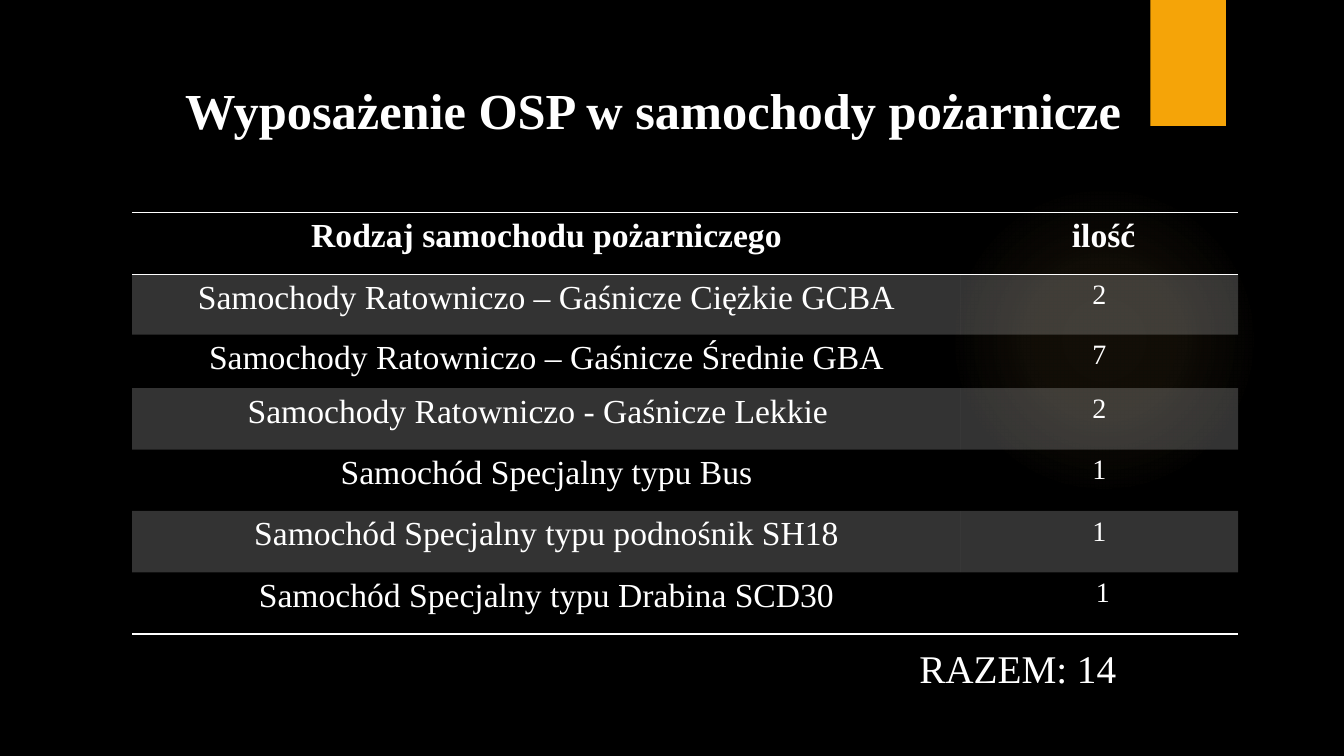
from lxml.etree import SubElement
from pptx import Presentation
from pptx.dml.color import RGBColor
from pptx.enum.shapes import MSO_SHAPE
from pptx.enum.text import MSO_ANCHOR, PP_ALIGN
from pptx.oxml import parse_xml
from pptx.oxml.ns import nsdecls, qn
from pptx.util import Inches, Pt


class Theme:
    font = "Times New Roman"
    background = "000000"
    text = "FFFFFF"
    accent = "F5A408"
    glow = "FAC96A"
    glow_stops = ((0, 7), (36, 6), (69, 0))
    band_opacity = 20
    title_size = 36
    total_size = 28
    heading_size = 24
    count_size = 20
    plain_table_style = "{2D5ABB26-0587-4C30-8999-92F81FD0307C}"


HEADINGS = ("Rodzaj samochodu pożarniczego", " ilość")
VEHICLES = (
    ("Samochody Ratowniczo – Gaśnicze Ciężkie GCBA", "2"),
    ("Samochody Ratowniczo – Gaśnicze Średnie GBA", "7"),
    ("Samochody Ratowniczo - Gaśnicze Lekkie", "2"),
    ("Samochód Specjalny typu Bus", "1"),
    ("Samochód Specjalny typu podnośnik SH18", "1"),
    ("Samochód Specjalny typu Drabina SCD30", " 1"),
)
COLUMN_WIDTHS = (8.22, 2.75)
ROW_HEIGHTS = (0.61, 0.6, 0.53, 0.61, 0.61, 0.61, 0.61)


def write_text(text_frame, text, size, bold=False, alignment=PP_ALIGN.CENTER, spacing=1.0):
    text_frame.text = text
    paragraph = text_frame.paragraphs[0]
    paragraph.alignment = alignment
    paragraph.line_spacing = spacing
    font = paragraph.runs[0].font
    for name, value in {"name": Theme.font, "size": Pt(size), "bold": bold}.items():
        setattr(font, name, value)
    font.color.rgb = RGBColor.from_string(Theme.text)


def add_plain_shape(slide, kind, left, top, width, height):
    shape = slide.shapes.add_shape(
        kind, Inches(left), Inches(top), Inches(width), Inches(height)
    )
    shape.shadow.inherit = False
    shape.line.fill.background()
    return shape


def add_glow(slide):
    shape = add_plain_shape(slide, MSO_SHAPE.OVAL, 9.41, 1.83, 3.08, 3.08)
    stops = "".join(
        f'<a:gs pos="{position * 1000}"><a:srgbClr val="{Theme.glow}">'
        f'<a:alpha val="{opacity * 1000}"/></a:srgbClr></a:gs>'
        for position, opacity in Theme.glow_stops
    )
    gradient = parse_xml(
        f'<a:gradFill {nsdecls("a")}><a:gsLst>{stops}</a:gsLst><a:path path="circle">'
        '<a:fillToRect l="50000" t="50000" r="50000" b="50000"/></a:path></a:gradFill>'
    )
    shape._element.spPr.find(qn("a:prstGeom")).addnext(gradient)


def add_accent_tab(slide):
    shape = add_plain_shape(slide, MSO_SHAPE.RECTANGLE, 11.41, 0, 0.75, 1.25)
    shape.fill.solid()
    shape.fill.fore_color.rgb = RGBColor.from_string(Theme.accent)


def format_title(slide, text):
    title = slide.shapes.title
    box = {"left": 0.53, "top": 0.7, "width": 11.9, "height": 0.84}
    for name, value in box.items():
        setattr(title, name, Inches(value))
    title.text_frame.vertical_anchor = MSO_ANCHOR.MIDDLE
    write_text(title.text_frame, text, Theme.title_size, bold=True, spacing=0.9)


def add_cell_borders(cell, edges):
    properties = cell._tc.get_or_add_tcPr()
    for index, edge in enumerate(edges):
        border = parse_xml(
            f'<a:{edge} {nsdecls("a")} w="{Pt(1)}"><a:solidFill>'
            f'<a:srgbClr val="{Theme.text}"/></a:solidFill></a:{edge}>'
        )
        properties.insert(index, border)


def fill_cell(cell, banded):
    if not banded:
        cell.fill.background()
        return
    cell.fill.solid()
    cell.fill.fore_color.rgb = RGBColor.from_string(Theme.text)
    color = cell._tc.tcPr.find(f'{qn("a:solidFill")}/{qn("a:srgbClr")}')
    SubElement(color, qn("a:alpha"), val=str(Theme.band_opacity * 1000))


def add_vehicle_table(slide):
    rows = (HEADINGS, *VEHICLES)
    frame = slide.shapes.add_table(
        len(rows), len(HEADINGS), Inches(1.31), Inches(2.11),
        Inches(sum(COLUMN_WIDTHS)), Inches(sum(ROW_HEIGHTS)),
    )
    table = frame.table
    table.first_row = table.horz_banding = False
    table._tbl.tblPr.find(qn("a:tableStyleId")).text = Theme.plain_table_style
    for column, width in zip(table.columns, COLUMN_WIDTHS):
        column.width = Inches(width)
    edges = {0: ("lnT", "lnB"), len(rows) - 1: ("lnB",)}
    for row_index, values in enumerate(rows):
        table.rows[row_index].height = Inches(ROW_HEIGHTS[row_index])
        is_heading = row_index == 0
        for column_index, value in enumerate(values):
            cell = table.cell(row_index, column_index)
            is_count = column_index == 1 and not is_heading
            size = Theme.count_size if is_count else Theme.heading_size
            write_text(cell.text_frame, value, size, bold=is_heading)
            fill_cell(cell, banded=row_index % 2 == 1)
            add_cell_borders(cell, edges.get(row_index, ()))
    table.cell(3, 0).margin_right = Inches(0.27)


def add_total(slide, text):
    box = slide.shapes.add_textbox(Inches(9.02), Inches(6.3), Inches(3.26), Inches(0.57))
    box.text_frame.word_wrap = True
    write_text(
        box.text_frame, text, Theme.total_size, alignment=PP_ALIGN.LEFT, spacing=1.1
    )


def main():
    presentation = Presentation()
    presentation.slide_width = Inches(13.33)
    presentation.slide_height = Inches(7.5)
    slide = presentation.slides.add_slide(presentation.slide_layouts[5])
    slide.background.fill.solid()
    slide.background.fill.fore_color.rgb = RGBColor.from_string(Theme.background)
    add_glow(slide)
    add_accent_tab(slide)
    format_title(slide, "Wyposażenie OSP w samochody pożarnicze")
    add_vehicle_table(slide)
    add_total(slide, "RAZEM: 14")
    presentation.save("out.pptx")


if __name__ == "__main__":
    main()
